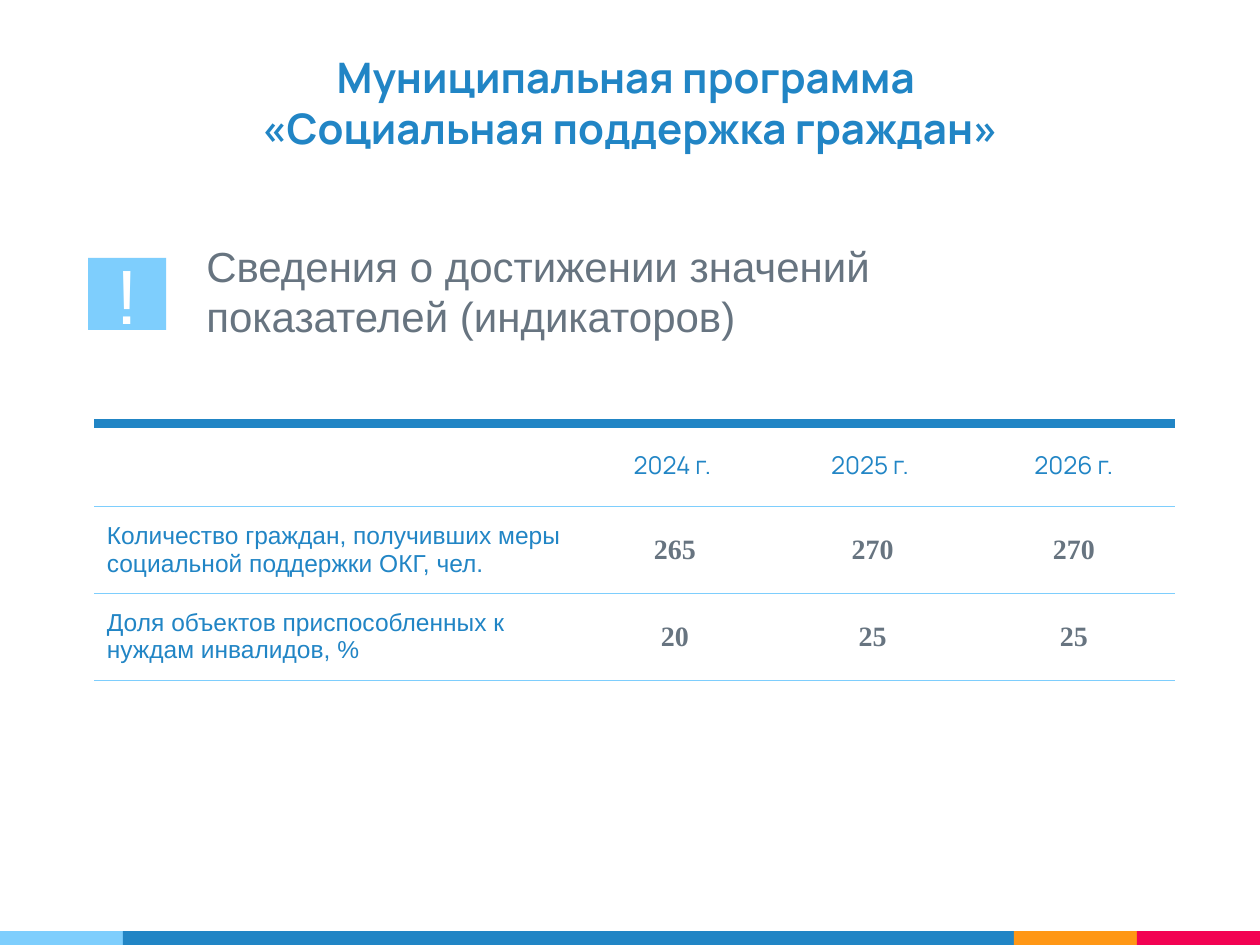
from dataclasses import dataclass

from lxml import etree
from pptx import Presentation
from pptx import util as u
from pptx.dml.color import RGBColor
from pptx.enum import shapes, text
from pptx.oxml.ns import qn

Cm, Pt = u.Cm, u.Pt


@dataclass(frozen=True)
class Theme:
    blue: str = "2185C5"
    sky: str = "7ECEFD"
    orange: str = "FF9715"
    red: str = "F20253"
    gray: str = "677480"
    white: str = "FFFFFF"
    heading: str = "Manrope"
    body: str = "Arial"
    figures: str = "Times New Roman"
    title_size: int = 24
    icon_size: int = 44
    label_size: int = 14
    value_size: int = 16


T = Theme()
CENTER, LEFT = text.PP_ALIGN.CENTER, text.PP_ALIGN.LEFT
MIDDLE = text.MSO_ANCHOR.MIDDLE


def write(tf, words, font, size, color, bold=False, align=CENTER):
    tf.text = words
    tf.word_wrap = True
    for p in tf.paragraphs:
        p.alignment = align
        p.font.name = font
        p.font.size = Pt(size)
        p.font.bold = bold
        p.font.color.rgb = RGBColor.from_string(color)


def add_text(s, box, words, font, color, anchor, **style):
    tf = s.shapes.add_textbox(*map(Cm, box)).text_frame
    write(tf, words, font, T.title_size, color, **style)
    tf.vertical_anchor = anchor
    return tf


def add_block(s, box, color):
    sp = s.shapes.add_shape(shapes.MSO_SHAPE.RECTANGLE, *map(Cm, box))
    sp.shadow.inherit = False
    sp.fill.solid()
    sp.fill.fore_color.rgb = RGBColor.from_string(color)
    sp.line.fill.background()
    return sp


def add_footer(s):
    left = 0
    for width, color in ((2.48, T.sky), (17.96, T.blue), (2.48, T.orange), (2.48, T.red)):
        add_block(s, (left, 18.77, width, 0.28), color)
        left += width


def add_icon(s):
    tf = add_block(s, (1.78, 5.2, 1.57, 1.45), T.sky).text_frame
    write(tf, "!", T.body, T.icon_size, T.white)
    tf.vertical_anchor = MIDDLE
    tf.margin_top = tf.margin_bottom = Cm(0.25)


def set_border(cell, side, color=None, width=0):
    ln = etree.SubElement(cell._tc.get_or_add_tcPr(), qn(f"a:ln{side}"), w=str(Pt(width)))
    if color is None:
        etree.SubElement(ln, qn("a:noFill"))
    else:
        fill = etree.SubElement(ln, qn("a:solidFill"))
        etree.SubElement(fill, qn("a:srgbClr"), val=color)


def style_cell(cell, is_header):
    set_border(cell, "L")
    set_border(cell, "R")
    set_border(cell, "T", *((T.blue, 6) if is_header else (T.sky, 0.75)))
    set_border(cell, "B", T.sky, 0.75)
    cell.fill.background()
    cell.vertical_anchor = MIDDLE
    if is_header:
        cell.margin_top = cell.margin_bottom = Cm(0.18)


def add_indicators(s, rows):
    widths, heights = (9.75, 3.91, 4.06, 4.06), (1.68, 1.75, 1.75)
    table = s.shapes.add_table(
        len(rows), len(widths), Cm(1.9), Cm(8.53), Cm(sum(widths)), Cm(sum(heights))
    ).table
    table.first_row = table.horz_banding = False
    for column, width in zip(table.columns, widths):
        column.width = Cm(width)
    for i, (row, values) in enumerate(zip(table.rows, rows)):
        row.height = Cm(heights[i])
        for j, (cell, value) in enumerate(zip(row.cells, values)):
            style_cell(cell, i == 0)
            if i == 0:
                write(cell.text_frame, value, T.heading, T.label_size, T.blue)
            elif j == 0:
                write(cell.text_frame, value, T.body, T.label_size, T.blue, align=LEFT)
            else:
                write(cell.text_frame, value, T.figures, T.value_size, T.gray, bold=True)


def main():
    prs = Presentation()
    prs.slide_width, prs.slide_height = Cm(25.4), Cm(19.05)
    s = prs.slides.add_slide(prs.slide_layouts[6])
    add_footer(s)
    tf = add_text(s, (0.5, 0.53, 24.4, 2.8),
                  "Муниципальная программа \v«Социальная поддержка граждан»",
                  T.heading, T.blue, text.MSO_ANCHOR.BOTTOM, bold=True)
    tf.margin_top = tf.margin_bottom = Cm(0.25)
    add_indicators(s, (
        ("", "2024 г. ", "2025 г. ", "2026 г."),
        ("Количество граждан, получивших меры социальной поддержки ОКГ, чел.",
         "265", "270", "270"),
        ("Доля объектов приспособленных к нуждам инвалидов, %", "20", "25", "25"),
    ))
    add_text(s, (3.91, 4.72, 15.34, 2.31),
             "Сведения о достижении значений показателей (индикаторов)",
             T.body, T.gray, text.MSO_ANCHOR.TOP, align=LEFT)
    add_icon(s)
    prs.save("out.pptx")


if __name__ == "__main__":
    main()
